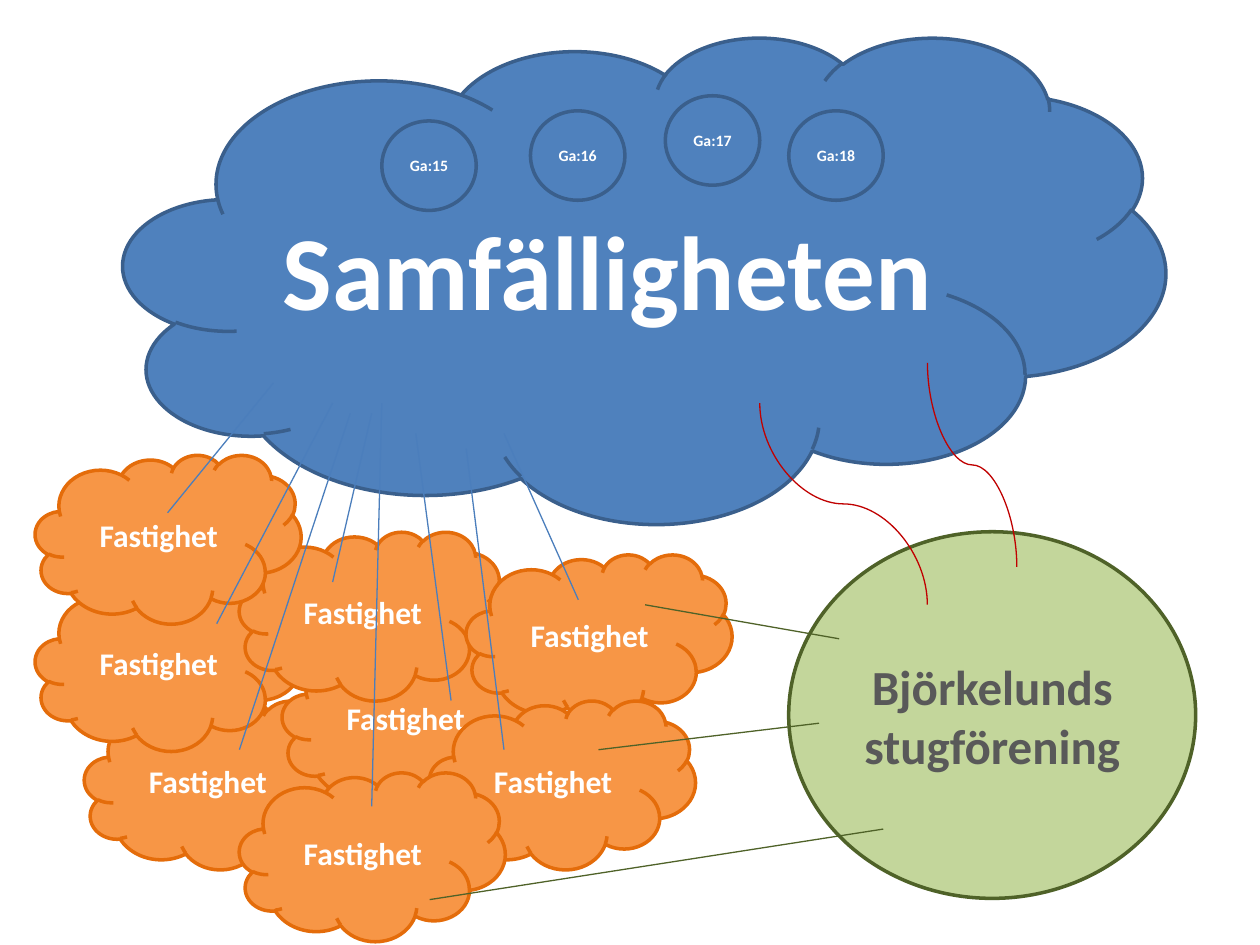
"""Build a slide showing how properties, the joint association and the cottage club connect."""
from dataclasses import dataclass

from lxml.etree import SubElement
from pptx import Presentation
from pptx.dml.color import RGBColor as Rgb
from pptx.enum.shapes import MSO_CONNECTOR as Conn, MSO_SHAPE as Kind
from pptx.enum.text import MSO_ANCHOR as Anchor, PP_ALIGN as Align
from pptx.oxml.ns import qn
from pptx.util import Pt

PX = 9144


@dataclass(frozen=True)
class Theme:
    font: str = "Calibri"
    blue: str = "4F81BD"
    navy: str = "3A5F8C"
    sky: str = "4B7EBC"
    gold: str = "F79646"
    rust: str = "E46C0A"
    lime: str = "C3D69B"
    moss: str = "4F6228"
    red: str = "C00000"
    gray: str = "595959"
    white: str = "FFFFFF"
    huge: int = 60
    big: int = 28
    mid: int = 18
    tiny: int = 9
    edge: float = 2
    thin: float = 0.75


theme = Theme()
deck = Presentation()
deck.slide_width, deck.slide_height = 1000 * PX, 750 * PX
slide = deck.slides.add_slide(deck.slide_layouts[6])


def add_node(text, *, kind, box, fill, line, size, color=theme.white):
    node = slide.shapes.add_shape(kind, *(n * PX for n in box))
    node.shadow.inherit = False
    node.fill.solid()
    node.fill.fore_color.rgb = Rgb.from_string(fill)
    node.line.color.rgb = Rgb.from_string(line)
    node.line.width = Pt(theme.edge)
    frame = node.text_frame
    frame.word_wrap = True
    frame.vertical_anchor = Anchor.MIDDLE
    para = frame.paragraphs[0]
    para.alignment = Align.CENTER
    run = para.add_run()
    run.text = text
    run.font.name, run.font.size, run.font.bold = theme.font, Pt(size), True
    run.font.color.rgb = Rgb.from_string(color)


def add_link(ends, color, kind=Conn.STRAIGHT):
    link = slide.shapes.add_connector(kind, *(round(n * PX) for n in ends))
    link.line.color.rgb = Rgb.from_string(color)
    link.line.width = Pt(theme.thin)
    SubElement(link.element.spPr, qn("a:effectLst"))
    return link


add_node("Samfälligheten", kind=Kind.CLOUD, box=(98, 29, 827, 386),
         fill=theme.blue, line=theme.navy, size=theme.huge)

for name, left, top in [("Ga:16", 421, 88), ("Ga:15", 303, 96),
                        ("Ga:17", 528, 76), ("Ga:18", 626, 88)]:
    add_node(name, kind=Kind.OVAL, box=(left, top, 75, 71),
             fill=theme.blue, line=theme.navy, size=theme.tiny)

for left, top in [(67, 556), (28, 462), (224, 506), (190, 422),
                  (28, 361), (370, 440), (341, 556), (190, 613)]:
    add_node("Fastighet", kind=Kind.CLOUD, box=(left, top, 211, 134),
             fill=theme.gold, line=theme.rust, size=theme.mid)

for ends in [(133, 407, 217, 304), (172, 495, 264, 320),
             (190, 595, 278, 328), (295, 640, 303, 320),
             (358, 556, 330, 344), (264, 462, 295, 328),
             (400, 595, 370, 356), (459, 476, 400, 344)]:
    add_link(ends, theme.sky)

add_node("Björkelunds stugförening", kind=Kind.OVAL, box=(626, 422, 323, 291),
         fill=theme.lime, line=theme.moss, size=theme.big, color=theme.gray)

for ends in [(341, 714, 701, 658), (475, 595, 650, 574), (512, 480, 666, 507)]:
    add_link(ends, theme.moss)

for x1, y1, x2, y2 in [(736, 480, 603, 320), (807, 450, 736, 288)]:
    midx, midy = (x1 + x2) / 2, (y1 + y2) / 2
    dx, dy = (x1 - x2) / 2, (y1 - y2) / 2
    curve = add_link((midx - dy, midy + dx, midx + dy, midy - dx), theme.red, Conn.CURVE)
    curve.element.spPr.xfrm.set("rot", str(270 * 60000))

deck.save("out.pptx")
